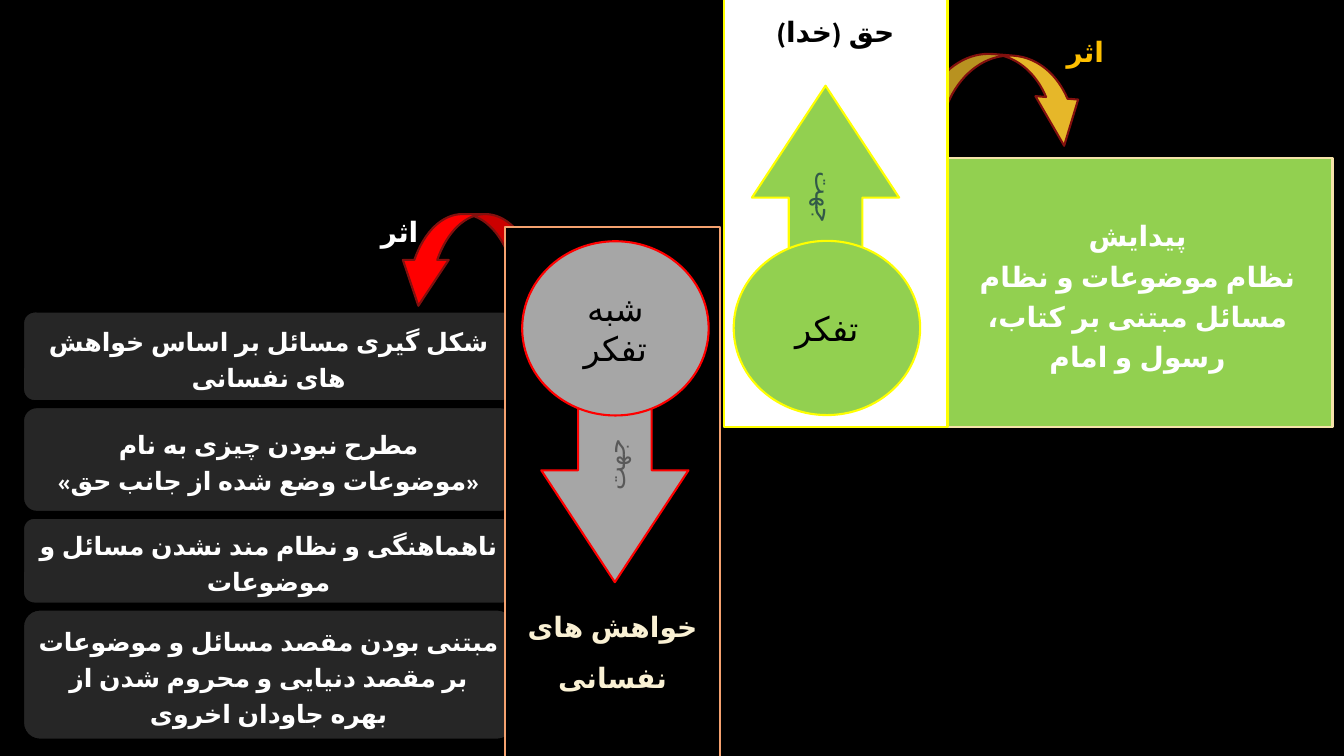
from dataclasses import dataclass

import pptx
import pptx.dml.color
import pptx.enum.lang
import pptx.enum.shapes
import pptx.enum.text
import pptx.oxml
import pptx.oxml.ns
import pptx.util

Cm = pptx.util.Cm
KIND = pptx.enum.shapes.MSO_SHAPE
ANCHOR = pptx.enum.text.MSO_ANCHOR


@dataclass(frozen=True)
class Theme:
    font: str = "League Spartan"
    black: str = "000000"
    white: str = "FFFFFF"
    green: str = "92D050"
    yellow: str = "FFFF00"
    red: str = "FF0000"
    maroon: str = "82100E"
    gold: str = "E6B729"
    amber: str = "FFC000"
    sand: str = "F5E2A9"
    cream: str = "FAF1D4"
    peach: str = "F4A16F"
    grey: str = "A6A6A6"
    charcoal: str = "262626"
    dark_grey: str = "595959"
    dark_green: str = "325948"
    small: int = 18
    medium: int = 20
    large: int = 24
    outline: float = 1.5


THEME = Theme()


def rgb(value):
    return pptx.dml.color.RGBColor.from_string(value)


def put(slide, kind, box, fill=None, line=None, adjust=(), rotation=0):
    """Place a preset shape; box is left, top, width, height in cm."""
    shape = slide.shapes.add_shape(kind, *map(Cm, box))
    shape.shadow.inherit = False
    shape.rotation = rotation
    for index, value in enumerate(adjust):
        shape.adjustments[index] = value
    if fill:
        shape.fill.solid()
        shape.fill.fore_color.rgb = rgb(fill)
    else:
        shape.fill.background()
    if line:
        shape.line.color.rgb = rgb(line)
        shape.line.width = pptx.util.Pt(THEME.outline)
    else:
        shape.line.fill.background()
    return shape


def write(shape, lines, size, color, bold=True, spacing=1.2, **frame_format):
    """Fill a shape with centred right-to-left Persian paragraphs."""
    frame = shape.text_frame
    frame_format = {"word_wrap": True, "vertical_anchor": ANCHOR.MIDDLE, **frame_format}
    for name, value in frame_format.items():
        setattr(frame, name, value)
    font_format = {"name": THEME.font, "size": pptx.util.Pt(size), "bold": bold,
                   "language_id": pptx.enum.lang.MSO_LANGUAGE_ID.FARSI}
    for index, line in enumerate(lines):
        paragraph = frame.paragraphs[0] if index == 0 else frame.add_paragraph()
        paragraph.alignment = pptx.enum.text.PP_ALIGN.CENTER
        paragraph.line_spacing = spacing
        paragraph._p.get_or_add_pPr().set("rtl", "1")
        run = paragraph.add_run()
        run.text = line
        for name, value in font_format.items():
            setattr(run.font, name, value)
        run.font.color.rgb = rgb(color)
        complex_script = pptx.oxml.parse_xml(
            f'<a:cs {pptx.oxml.ns.nsdecls("a")} typeface="{THEME.font}"/>')
        run._r.get_or_add_rPr().append(complex_script)


def effect_label(slide, left, top, color):
    label = put(slide, KIND.ROUNDED_RECTANGLE, (left, top, 2.62, 1.42), adjust=[0.13])
    write(label, ["اثر"], THEME.medium, color)


def true_effect(slide, box):
    left, top, _, _ = box
    panel = put(slide, KIND.ROUNDED_RECTANGLE, box, THEME.green, THEME.sand, [0])
    write(panel, ["پیدایش", "نظام موضوعات و نظام مسائل مبتنی بر کتاب، رسول و امام"],
          THEME.medium, THEME.white)
    put(slide, KIND.CURVED_LEFT_ARROW, (left + 0.51, top - 3.62, 2.16, 4.22),
        THEME.gold, THEME.maroon, [0.25, 0.5, 0.55], 274.6)
    effect_label(slide, left + 2.29, top - 3.47, THEME.amber)


def false_effects(slide, box):
    """Stack the consequences downwards with one gap, under a curved arrow."""
    left, top, width, _ = box
    gap = 0.15
    consequences = [
        (2.26, ["شکل گیری مسائل بر اساس خواهش های نفسانی"]),
        (2.64, ["مطرح نبودن چیزی به نام", "«موضوعات وضع شده از جانب حق»"]),
        (2.16, ["ناهماهنگی و نظام مند نشدن مسائل و موضوعات"]),
        (3.28, ["مبتنی بودن مقصد مسائل و موضوعات بر مقصد دنیایی "
                "و محروم شدن از بهره جاودان اخروی"]),
    ]
    row_top = top
    for height, lines in consequences:
        row = put(slide, KIND.ROUNDED_RECTANGLE, (left, row_top, width, height),
                  THEME.charcoal, THEME.black, [0.13])
        write(row, lines, THEME.small, THEME.white)
        row_top += height + gap
    put(slide, KIND.CURVED_RIGHT_ARROW, (left + 10.06, top - 3.13, 2.31, 3.66),
        THEME.red, THEME.maroon, [0.25, 0.5, 0.5], 90)
    effect_label(slide, left + 8.18, top - 2.82, THEME.white)


def thought_column(slide, box, look, goal, thought):
    """A column with a goal, a direction arrow and a circle of thought."""
    left, top, _, _ = box
    column = put(slide, KIND.ROUNDED_RECTANGLE, box, look["back"], look["border"], [0])
    write(column, [goal], THEME.medium, look["goal_color"], spacing=1.5,
          **look["goal_frame"])

    arrow_x, arrow_y, arrow_height = look["arrow"]
    direction = put(slide, KIND.UP_ARROW,
                    (left + arrow_x, top + arrow_y, 3.71, arrow_height),
                    look["fill"], look["line"], [0.5, 0.76], look["turn"])
    write(direction, ["جهت"], THEME.small, look["direction_color"], False, 1.0)
    direction.text_frame._txBody.bodyPr.set("vert", "vert")

    circle_x, circle_y = look["circle"]
    circle = put(slide, KIND.OVAL, (left + circle_x, top + circle_y, 4.7, 4.39),
                 look["fill"], look["line"])
    write(circle, [thought], THEME.large, THEME.black, False, 1.0)


TRUE_LOOK = {
    "back": THEME.white, "border": THEME.yellow,
    "fill": THEME.green, "line": THEME.yellow,
    "goal_color": THEME.black, "direction_color": THEME.dark_green,
    "goal_frame": {"vertical_anchor": ANCHOR.TOP, "margin_top": Cm(0.93)},
    "arrow": (0.71, 3.15, 4.22), "turn": 0, "circle": (0.25, 7.06),
}
FALSE_LOOK = {
    "back": THEME.black, "border": THEME.peach,
    "fill": THEME.grey, "line": THEME.red,
    "goal_color": THEME.cream, "direction_color": THEME.dark_grey,
    "goal_frame": {"vertical_anchor": ANCHOR.BOTTOM, "margin_bottom": Cm(2.08)},
    "arrow": (0.91, 4.45, 4.5), "turn": 180, "circle": (0.43, 0.36),
}


def main():
    deck = pptx.Presentation()
    deck.slide_width, deck.slide_height = Cm(33.87), Cm(19.05)
    slide = deck.slides.add_slide(deck.slide_layouts[6])
    slide.background.fill.solid()
    slide.background.fill.fore_color.rgb = rgb(THEME.black)

    true_effect(slide, (23.75, 3.98, 9.83, 6.79))
    false_effects(slide, (0.58, 7.85, 12.38, 10.79))
    thought_column(slide, (18.24, -0.99, 5.64, 11.76), TRUE_LOOK, "حق (خدا)", "تفکر")
    thought_column(slide, (12.73, 5.72, 5.41, 13.84), FALSE_LOOK,
                   "خواهش های نفسانی", "شبه تفکر")
    deck.save("out.pptx")


if __name__ == "__main__":
    main()
